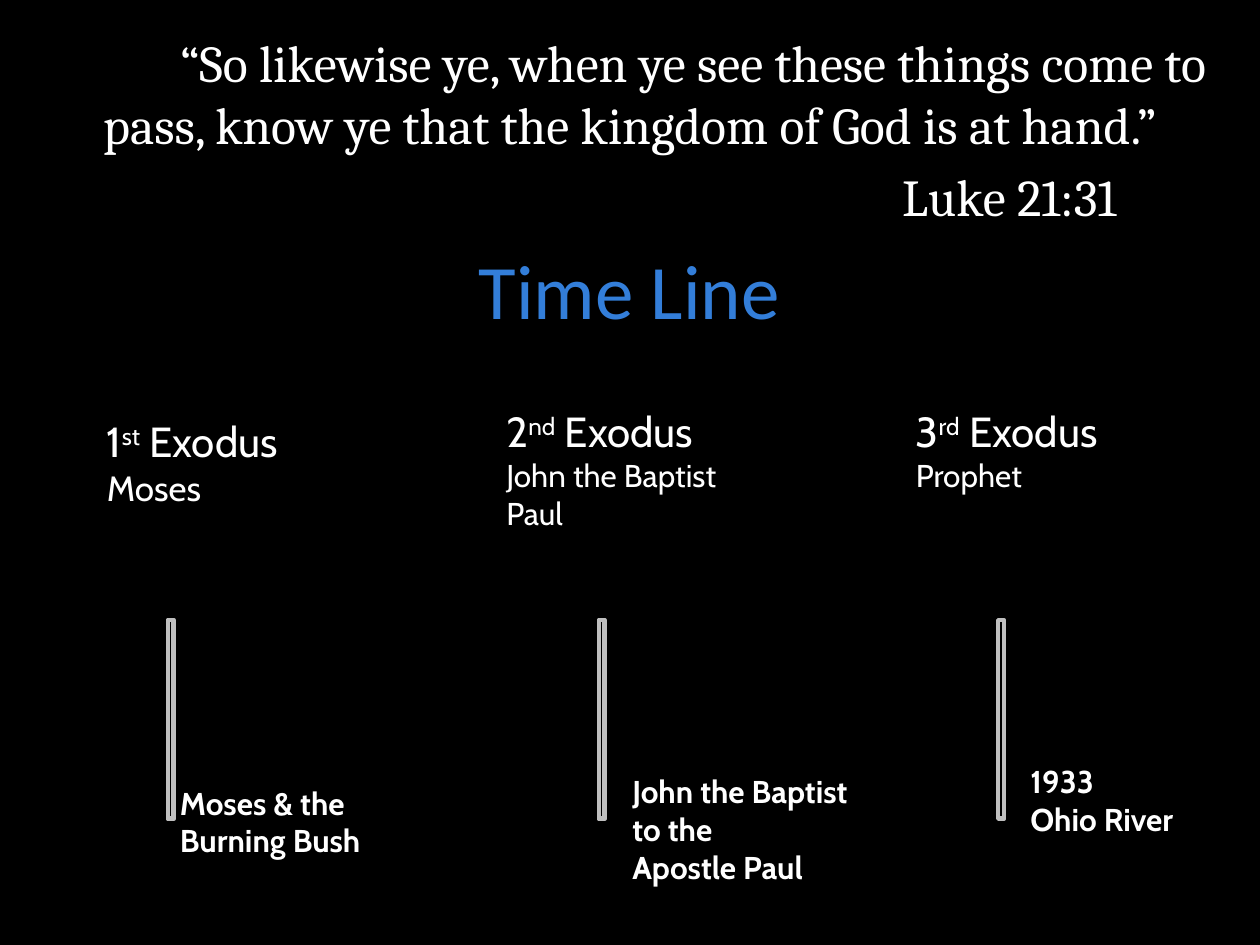
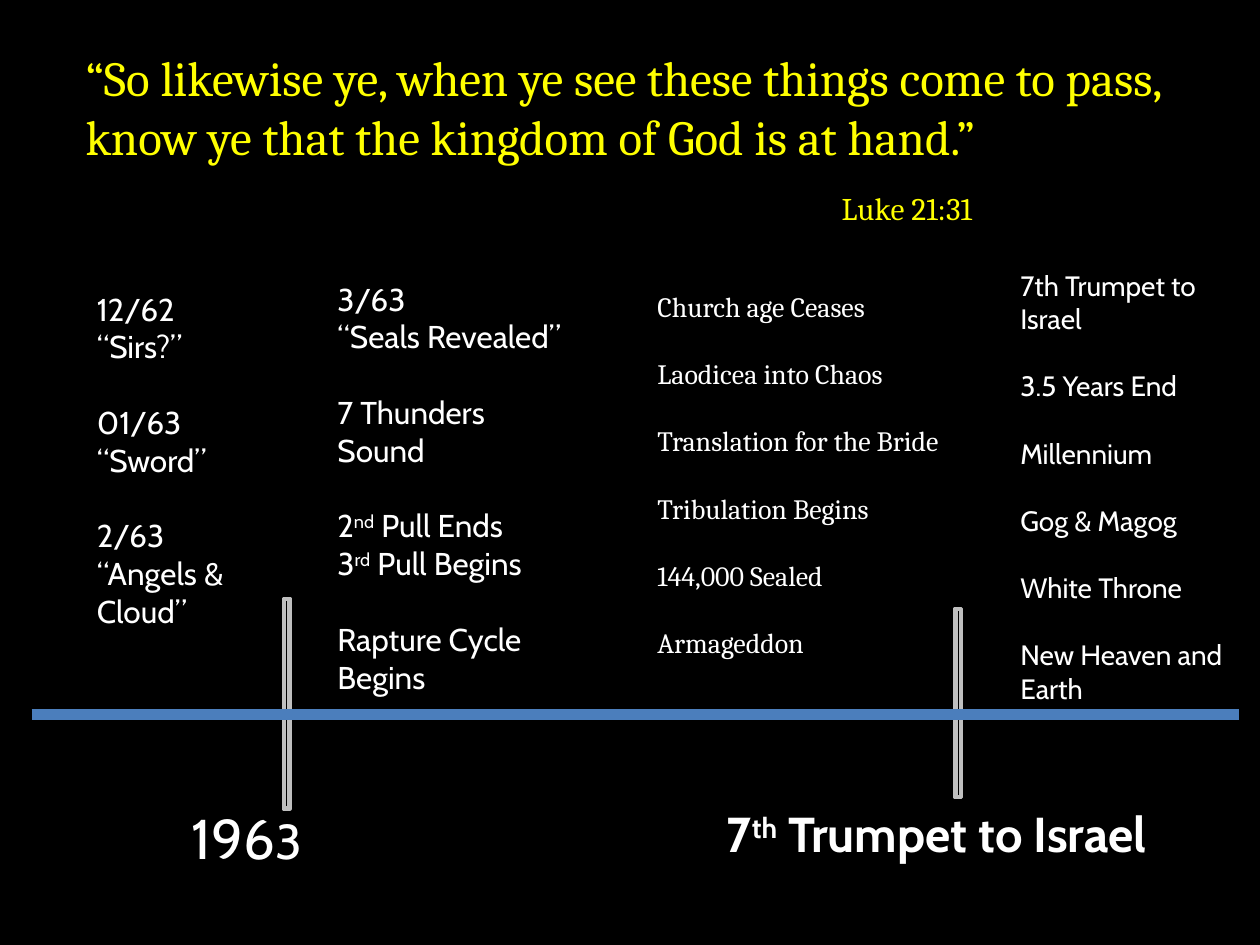
from lxml import etree
from pptx import Presentation
from pptx.dml.color import RGBColor
from pptx.enum.shapes import MSO_CONNECTOR, MSO_SHAPE
from pptx.enum.text import MSO_ANCHOR, MSO_AUTO_SIZE, PP_ALIGN
from pptx.oxml.ns import qn
from pptx.util import Inches, Pt

FRAME = MSO_SHAPE.FRAME
STRAIGHT = MSO_CONNECTOR.STRAIGHT
LEFT, CENTER = PP_ALIGN.LEFT, PP_ALIGN.CENTER
TOP, MIDDLE = MSO_ANCHOR.TOP, MSO_ANCHOR.MIDDLE
NO_FIT, GROW = MSO_AUTO_SIZE.NONE, MSO_AUTO_SIZE.SHAPE_TO_FIT_TEXT

BLACK, WHITE, YELLOW = "000000", "FFFFFF", "FFFF00"
TITLE_BLUE, MARKER_BLUE, AXIS_BLUE = "337ED9", "4F81BD", "4B7EBC"
MARKER_GRAY = "BFBFBF"
MARKER_WIDTH = 0.05
LINE_HEIGHT = 1.2

LABEL = {"name": "Cabin", "size": 18, "bold": False, "color": WHITE}
BOLD_LABEL = {**LABEL, "bold": True}
SERIF = {"name": "Cambria", "size": 16, "bold": False, "color": WHITE}
TITLE = {"name": "Calibri", "size": 44, "bold": False, "color": TITLE_BLUE}

VERSE = ("“So likewise ye, when ye see these things come to pass, "
         "know ye that the kingdom of God is at hand.”")
REFERENCE = "Luke 21:31"


def rgb(value):
    return RGBColor.from_string(value)


def place(shape, box):
    for name, value in zip(("left", "top", "width", "height"), box):
        setattr(shape, name, Inches(value))


def add_run(paragraph, text, style, raised=False):
    run = paragraph.add_run()
    run.text = text
    values = {**style, "size": Pt(style["size"])}
    run.font.color.rgb = rgb(values.pop("color"))
    for name, value in values.items():
        setattr(run.font, name, value)
    if raised:
        run.font._element.set("baseline", "30000")


def write_line(paragraph, text, style, before=0, align=LEFT, margin=0, indent=0):
    properties = paragraph._p.get_or_add_pPr()
    properties.set("marL", str(Inches(margin)))
    properties.set("indent", str(Inches(indent)))
    paragraph.alignment = align
    paragraph.space_before = Pt(before)
    for index, part in enumerate(text.split("^")):
        add_run(paragraph, part, style, raised=index % 2 == 1)
    return paragraph


def prepare_frame(shape, auto_size, anchor=TOP):
    settings = {"word_wrap": True, "auto_size": auto_size, "vertical_anchor": anchor}
    for name, value in settings.items():
        setattr(shape.text_frame, name, value)
    return shape.text_frame


def add_text(slide, box, groups, style, margin=0, first_size=None):
    frame = prepare_frame(slide.shapes.add_textbox(*map(Inches, box)), GROW)
    paragraph = frame.paragraphs[0]
    for group_index, group in enumerate(groups):
        for line_index, text in enumerate(group):
            is_first = group_index == line_index == 0
            if not is_first:
                paragraph = frame.add_paragraph()
            opens_group = group_index > 0 and line_index == 0
            before = style["size"] * LINE_HEIGHT if opens_group else 0
            line_style = {**style, "size": first_size} if is_first and first_size else style
            write_line(paragraph, text, line_style, before, margin=margin)
    return frame


def add_marker(slide, left, top, height):
    marker = slide.shapes.add_shape(
        FRAME, *map(Inches, (left, top, MARKER_WIDTH, height)))
    marker.shadow.inherit = False
    marker.fill.solid()
    marker.fill.fore_color.rgb = rgb(MARKER_BLUE)
    marker.line.color.rgb = rgb(MARKER_GRAY)
    marker.line.width = Pt(2)


def add_axis(slide, left, right, top):
    axis = slide.shapes.add_connector(
        STRAIGHT, Inches(left), Inches(top), Inches(right), Inches(top))
    axis.line.color.rgb = rgb(AXIS_BLUE)
    axis.line.width = Pt(6.25)
    etree.SubElement(axis._element.spPr, qn("a:effectLst"))


def add_verse(slide, box, verse_style, reference_style, verse_layout, reference_layout):
    shape = slide.placeholders[1]
    place(shape, box)
    frame = prepare_frame(shape, NO_FIT)
    write_line(frame.paragraphs[0], VERSE, verse_style, **verse_layout)
    write_line(frame.add_paragraph(), REFERENCE, reference_style, **reference_layout)


def add_black_slide(presentation):
    slide = presentation.slides.add_slide(presentation.slide_layouts[0])
    slide.background.fill.solid()
    slide.background.fill.fore_color.rgb = rgb(BLACK)
    return slide


def build_exodus_slide(presentation):
    slide = add_black_slide(presentation)
    place(slide.shapes.title, (0.58, 1.38, 8.83, 1.83))
    frame = prepare_frame(slide.shapes.title, NO_FIT, MIDDLE)
    write_line(frame.paragraphs[0], "Time Line", TITLE, align=CENTER)
    verse_style = {**SERIF, "size": 29.6}
    add_verse(slide, (0.17, 0.19, 9.67, 1.64), verse_style, verse_style,
              {"align": CENTER, "indent": 1}, {"before": 6, "margin": 6.89})

    for left in (1.33, 4.75, 7.92):
        add_marker(slide, left, 4.92, 1.58)

    events = [
        ((1.33, 6.17, 2.25, 0.71), ["Moses & the Burning Bush"]),
        ((4.92, 6.08, 2.08, 1.01), ["John the Baptist to the", "Apostle Paul"]),
        ((8.08, 6, 1.58, 0.71), ["1933", "Ohio River"]),
    ]
    for box, lines in events:
        add_text(slide, box, [lines], BOLD_LABEL)

    exoduses = [
        ((0.75, 3.25, 2.58, 0.84), 20, ["1^st^ Exodus", "Moses"]),
        ((3.92, 3.17, 2.58, 1.11), 18, ["2^nd^ Exodus", "John the Baptist", "Paul"]),
        ((7.17, 3.17, 2.83, 0.81), 18, ["3^rd^ Exodus", "Prophet"]),
    ]
    for box, size, lines in exoduses:
        add_text(slide, box, [lines], {**LABEL, "size": size}, first_size=24)


def build_trumpet_slide(presentation):
    slide = add_black_slide(presentation)
    title = slide.shapes.title._element
    title.getparent().remove(title)
    verse_style = {**SERIF, "size": 28, "color": YELLOW}
    add_verse(slide, (0.58, 0.33, 8.83, 1.64), verse_style, {**verse_style, "size": 18},
              {}, {"before": 13.5, "margin": 6})

    add_marker(slide, 2.25, 4.75, 1.67)
    add_marker(slide, 7.58, 4.83, 1.5)

    add_text(slide, (0.67, 2.25, 1.92, 2.83), [
        ["12/62", "“Sirs?”"],
        ["01/63", "“Sword”"],
        ["2/63", "“Angels & Cloud”"],
    ], LABEL)
    add_text(slide, (4.92, 2.25, 3, 3.67), [
        ["Church age Ceases"],
        ["Laodicea into Chaos"],
        ["Translation for the Bride"],
        ["Tribulation Begins"],
        ["144,000 Sealed"],
        ["Armageddon"],
    ], SERIF, margin=0.2)
    add_text(slide, (2.58, 2.17, 2, 3.43), [
        ["3/63", "“Seals Revealed”"],
        ["7 Thunders Sound"],
        ["2^nd^ Pull Ends", "3^rd^ Pull Begins"],
        ["Rapture Cycle Begins"],
    ], LABEL)
    year = add_text(slide, (1.42, 6.33, 1.5, 0.64), [["196"]], {**LABEL, "size": 32})
    add_run(year.paragraphs[0], "3", {**LABEL, "size": 28})
    add_text(slide, (5.67, 6.33, 3.92, 0.57), [["7^th^ Trumpet to Israel"]],
             {**BOLD_LABEL, "size": 28})
    add_text(slide, (8, 2.08, 2, 3.6), [
        ["7th Trumpet to Israel"],
        ["3.5 Years End"],
        ["Millennium"],
        ["Gog & Magog"],
        ["White Throne"],
        ["New Heaven and Earth"],
    ], {**LABEL, "size": 16})
    add_axis(slide, 0.25, 9.83, 5.67)


def main():
    presentation = Presentation()
    presentation.slide_width = Inches(10)
    presentation.slide_height = Inches(7.5)
    build_exodus_slide(presentation)
    build_trumpet_slide(presentation)
    presentation.save("out.pptx")


if __name__ == "__main__":
    main()
